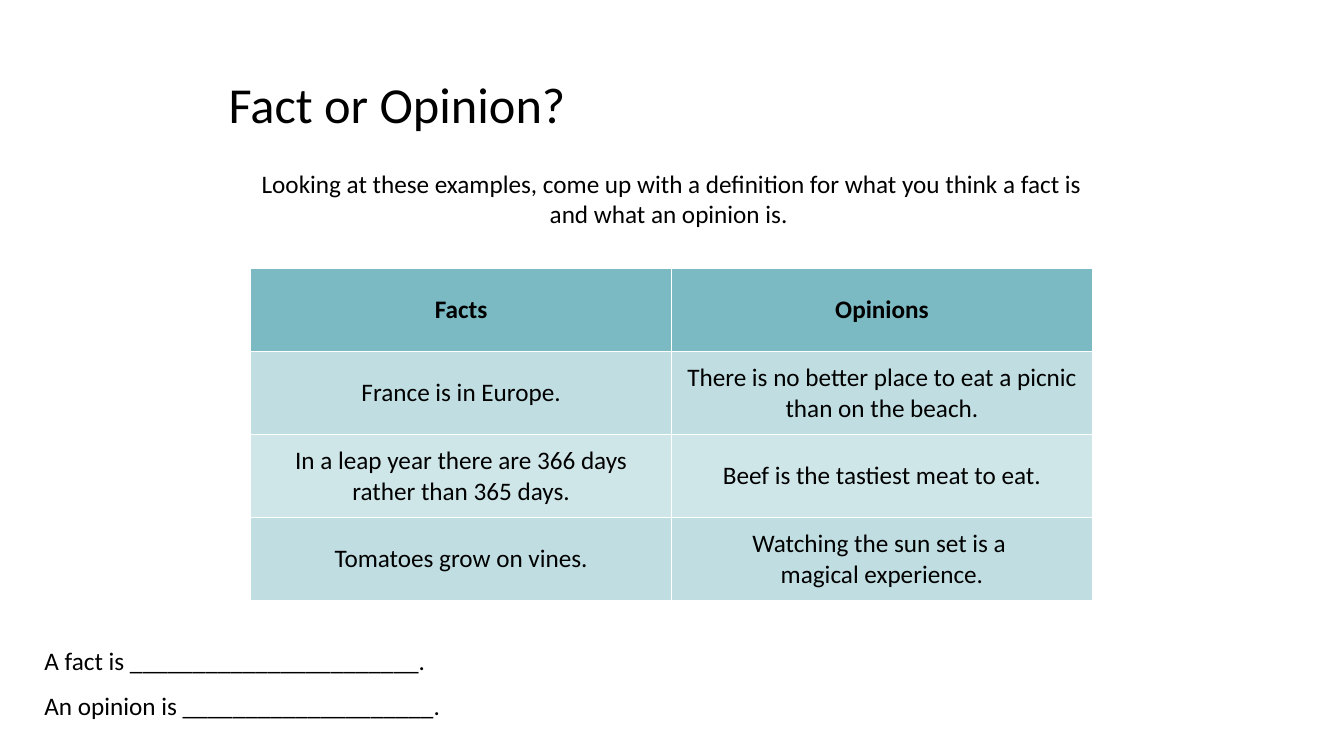
from pptx import Presentation
from pptx.dml.color import RGBColor
from pptx.enum.text import MSO_ANCHOR as Anchor, MSO_AUTO_SIZE as AutoSize, PP_ALIGN as Align
from pptx.util import Cm, Pt

BLACK = "000000"
HEADER_FILL = "7BBAC3"
ROW_FILLS = ("C0DEE2", "CFE6E9")
CONTENT_LEFT, CONTENT_WIDTH = Cm(6.32), Cm(21.21)

EXAMPLES = [
    ("Facts", "Opinions"),
    ("France is in Europe.",
     "There is no better place to eat a picnic than on the beach."),
    ("In a leap year there are 366 days rather than 365 days.",
     "Beef is the tastiest meat to eat."),
    ("Tomatoes grow on vines.",
     "Watching the sun set is a \nmagical experience."),
]


def color(value):
    return RGBColor.from_string(value)


def set_attributes(target, values):
    for key, value in values.items():
        setattr(target, key, value)


def write(frame, text, size=18, bold=False, **paragraph_format):
    """Fill a text frame, one paragraph per line of text."""
    frame.text = text
    for paragraph in frame.paragraphs:
        set_attributes(paragraph, paragraph_format)
        for run in paragraph.runs:
            set_attributes(run.font, {"name": "Calibri", "size": Pt(size), "bold": bold})
            run.font.color.rgb = color(BLACK)


def add_heading(slide, text):
    heading = slide.shapes.title
    set_attributes(heading, {"left": Cm(5.51), "top": Cm(1.32),
                             "width": Cm(22.83), "height": Cm(2.77)})
    set_attributes(heading.text_frame, {"vertical_anchor": Anchor.MIDDLE,
                                        "auto_size": AutoSize.NONE, "word_wrap": True})
    write(heading.text_frame, text, size=36, alignment=Align.LEFT, line_spacing=0.9)


def add_text(slide, text, left, top, height, **paragraph_format):
    frame = slide.shapes.add_textbox(left, top, CONTENT_WIDTH, height).text_frame
    set_attributes(frame, {"word_wrap": True, "margin_left": 0, "margin_right": 0,
                           "margin_top": Cm(0.2), "margin_bottom": Cm(0.2),
                           "auto_size": AutoSize.SHAPE_TO_FIT_TEXT})
    write(frame, text, **paragraph_format)


def add_examples(slide, rows):
    table = slide.shapes.add_table(len(rows), len(rows[0]), CONTENT_LEFT, Cm(6.76),
                                   CONTENT_WIDTH, Cm(8.38)).table
    for r, row in enumerate(rows):
        for c, text in enumerate(row):
            cell = table.cell(r, c)
            cell.vertical_anchor = Anchor.MIDDLE
            cell.fill.solid()
            cell.fill.fore_color.rgb = color(ROW_FILLS[(r - 1) % 2] if r else HEADER_FILL)
            write(cell.text_frame, text, bold=r == 0, alignment=Align.CENTER)


def main():
    deck = Presentation()
    set_attributes(deck, {"slide_width": Cm(33.87), "slide_height": Cm(19.05)})
    slide = deck.slides.add_slide(deck.slide_layouts[5])
    add_heading(slide, "Fact or Opinion?")
    add_text(slide, "Looking at these examples, come up with a definition for what "
                    "you think a fact is and what an opinion is. ",
             CONTENT_LEFT, Cm(4.04), Cm(2.72), alignment=Align.CENTER)
    add_examples(slide, EXAMPLES)
    add_text(slide, "A fact is _______________________.\n"
                    "An opinion is ____________________.",
             Cm(1.12), Cm(15.67), Cm(3.48), line_spacing=1.5)
    deck.save("out.pptx")


if __name__ == "__main__":
    main()
